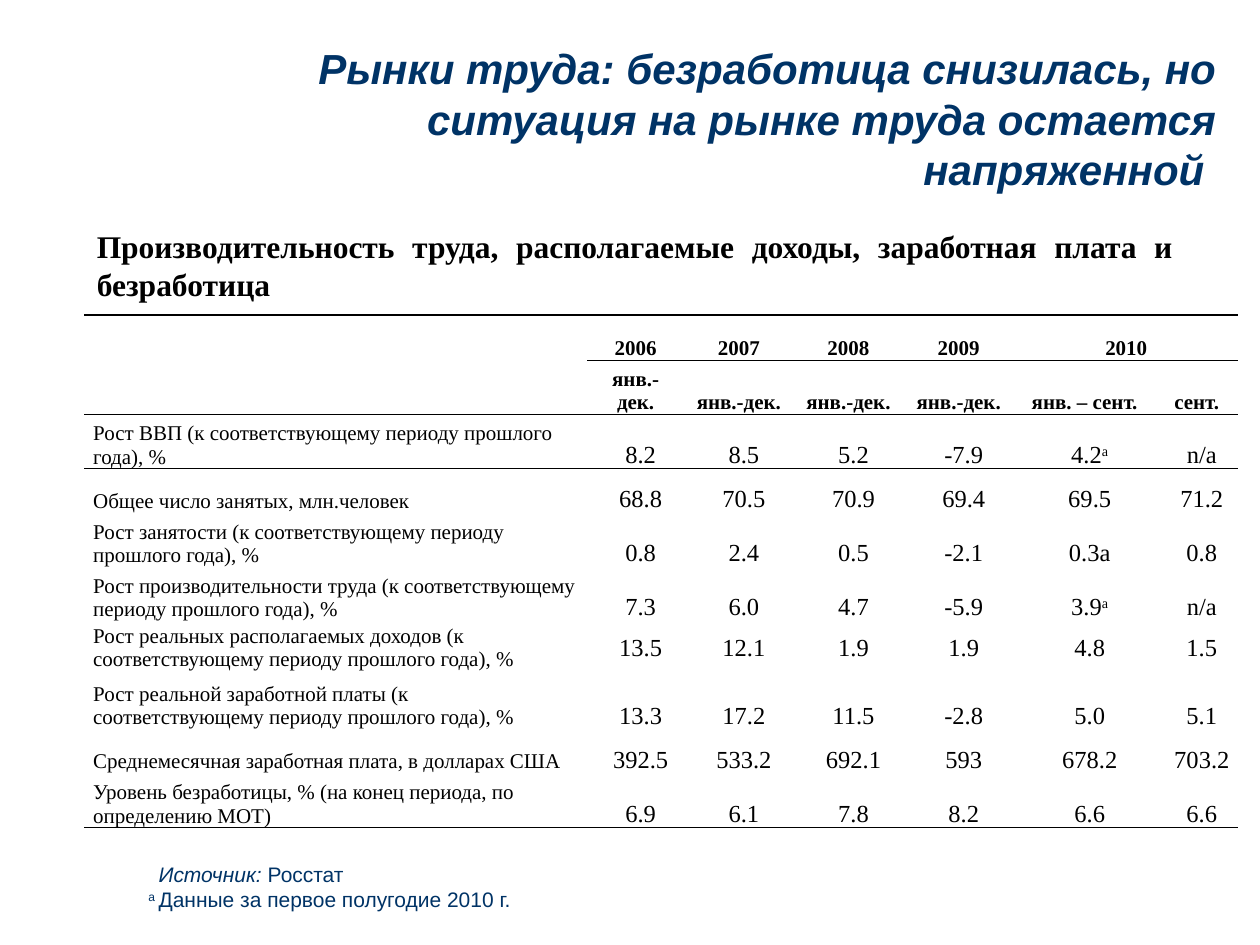
from pptx import Presentation
from pptx.dml.color import RGBColor
from pptx.enum.text import MSO_ANCHOR as Anchor, PP_ALIGN as Align
from pptx.oxml.ns import qn
from pptx.util import Inches, Pt
from lxml import etree

COLORS = {"navy": "003366", "black": "000000", "white": "FFFFFF"}
SERIF, SANS = "Times New Roman", "Arial"
NO_STYLE = "{2D5ABB26-0587-4C30-8999-92F81FD0307C}"


def write(para, parts, size, font, color, align, bold=False):
    """Fill a paragraph; parts are (text, mark) with mark "", "italic" or "super"."""
    para.alignment = align
    for text, mark in parts:
        span = para.add_run()
        span.text = text
        span.font.size = Pt(size)
        span.font.name = font
        span.font.bold = bold
        span.font.italic = mark == "italic"
        span.font.color.rgb = RGBColor.from_string(COLORS[color])
        if mark == "super":
            span._r.get_or_add_rPr().set("baseline", "30000")


def add_border(cell, side):
    line = etree.SubElement(cell._tc.get_or_add_tcPr(), qn(f"a:{side}"), w=str(Pt(1)))
    fill = etree.SubElement(line, qn("a:solidFill"))
    etree.SubElement(fill, qn("a:srgbClr"), val=COLORS["black"])


deck = Presentation()
deck.slide_width, deck.slide_height = Inches(10), Inches(7.5)
page = deck.slides.add_slide(deck.slide_layouts[6])

# Title, table caption and source note
text_boxes = [
    ((1.75, 0.17, 8, 1.42), Anchor.BOTTOM, Align.RIGHT, 24, SANS, "navy", True,
     [[("Рынки труда: безработица снизилась, но ситуация на рынке труда "
        "остается напряженной ", "italic")]]),
    ((0.67, 1.75, 8.74, 0.7), Anchor.MIDDLE, Align.JUSTIFY, 18, SERIF, "black", True,
     [[("Производительность труда, располагаемые доходы, заработная плата "
        "и безработица", "")]]),
    ((1.08, 6.79, 4.42, 0.71), Anchor.TOP, Align.JUSTIFY, 12, SANS, "navy", False,
     [[("Источник: ", "italic"), ("Росстат", "")],
      [("a ", "super"), ("Данные за первое полугодие 2010 г.", "")]]),
]
for place, anchor, align, size, font, color, bold, paragraphs in text_boxes:
    box = page.shapes.add_textbox(*map(Inches, place))
    frame = box.text_frame
    frame.word_wrap = True
    frame.vertical_anchor = anchor
    for number, parts in enumerate(paragraphs):
        para = frame.add_paragraph() if number else frame.paragraphs[0]
        write(para, parts, size, font, color, align, bold)
# The source line starts slightly to the right of the footnote mark
frame.paragraphs[0]._p.get_or_add_pPr().set("indent", str(Inches(0.08)))

# Labour market table; "^" starts a superscript
rows = [
    ["", "2006", "2007", "2008", "2009", "2010", ""],
    ["", "янв.-дек.", "янв.-дек.", "янв.-дек.", "янв.-дек.", "янв. – сент.", "сент."],
    ["Рост ВВП (к соответствующему периоду прошлого года), %",
     "8.2", "8.5", "5.2", "-7.9", "4.2^a", "n/a"],
    ["Общее число занятых, млн.человек",
     "68.8", "70.5", "70.9", "69.4", "69.5", "71.2"],
    ["Рост занятости (к соответствующему периоду прошлого года), %",
     "0.8", "2.4", "0.5", "-2.1", "0.3a", "0.8"],
    ["Рост производительности труда (к соответствующему периоду прошлого года), %",
     "7.3", "6.0", "4.7", "-5.9", "3.9^a", "n/a"],
    ["Рост реальных располагаемых доходов (к соответствующему периоду прошлого года), %",
     "13.5", "12.1", "1.9", "1.9", "4.8", "1.5"],
    ["Рост реальной заработной платы (к соответствующему периоду прошлого года), %",
     "13.3", "17.2", "11.5", "-2.8", "5.0", "5.1"],
    ["Среднемесячная заработная плата, в долларах США",
     "392.5", "533.2", "692.1", "593", "678.2", "703.2"],
    ["Уровень безработицы, % (на конец периода, по определению МОТ)",
     "6.9", "6.1", "7.8", "8.2", "6.6", "6.6"],
]
column_widths = [3.99, 0.77, 0.87, 0.87, 0.88, 1.12, 0.66]
row_heights = [0.36, 0.43, 0.43, 0.35, 0.43, 0.43, 0.43, 0.43, 0.35, 0.43]
HEADER_ROWS, MIDDLE_ROW, LAST_ROW = 2, 6, len(rows) - 1

holder = page.shapes.add_table(
    len(rows), len(column_widths), Inches(0.67), Inches(2.5),
    Inches(sum(column_widths)), Inches(sum(row_heights)))
table = holder.table
table.first_row = table.horz_banding = False
table._tbl.tblPr.find(qn("a:tableStyleId")).text = NO_STYLE
for column, width in zip(table.columns, column_widths):
    column.width = Inches(width)
for row, height in zip(table.rows, row_heights):
    row.height = Inches(height)
table.cell(0, 5).merge(table.cell(0, 6))

for r, values in enumerate(rows):
    for c, value in enumerate(values):
        cell = table.cell(r, c)
        cell.margin_left = cell.margin_right = Inches(0.07)
        cell.margin_top = cell.margin_bottom = 0
        cell.vertical_anchor = Anchor.MIDDLE if r == MIDDLE_ROW else Anchor.BOTTOM
        if r in (0, HEADER_ROWS) or (r == 1 and c > 0):
            add_border(cell, "lnT")
        if r in (1, LAST_ROW) or (r == 0 and c > 0):
            add_border(cell, "lnB")
        cell.fill.solid()
        cell.fill.fore_color.rgb = RGBColor.from_string(COLORS["white"])

        para = cell.text_frame.paragraphs[0]
        if not value:
            para.font.size = Pt(12)
            continue
        is_figure = r >= HEADER_ROWS and c > 0
        if is_figure:
            para._p.get_or_add_pPr().set("marL", str(Inches(0.08)))
        main, _, mark = value.partition("^")
        parts = [(main, "")] + ([(mark, "super")] if mark else [])
        write(para, parts, 14 if is_figure else 12, SERIF, "black",
              Align.CENTER if c else Align.LEFT, bold=r < HEADER_ROWS)

deck.save("out.pptx")
